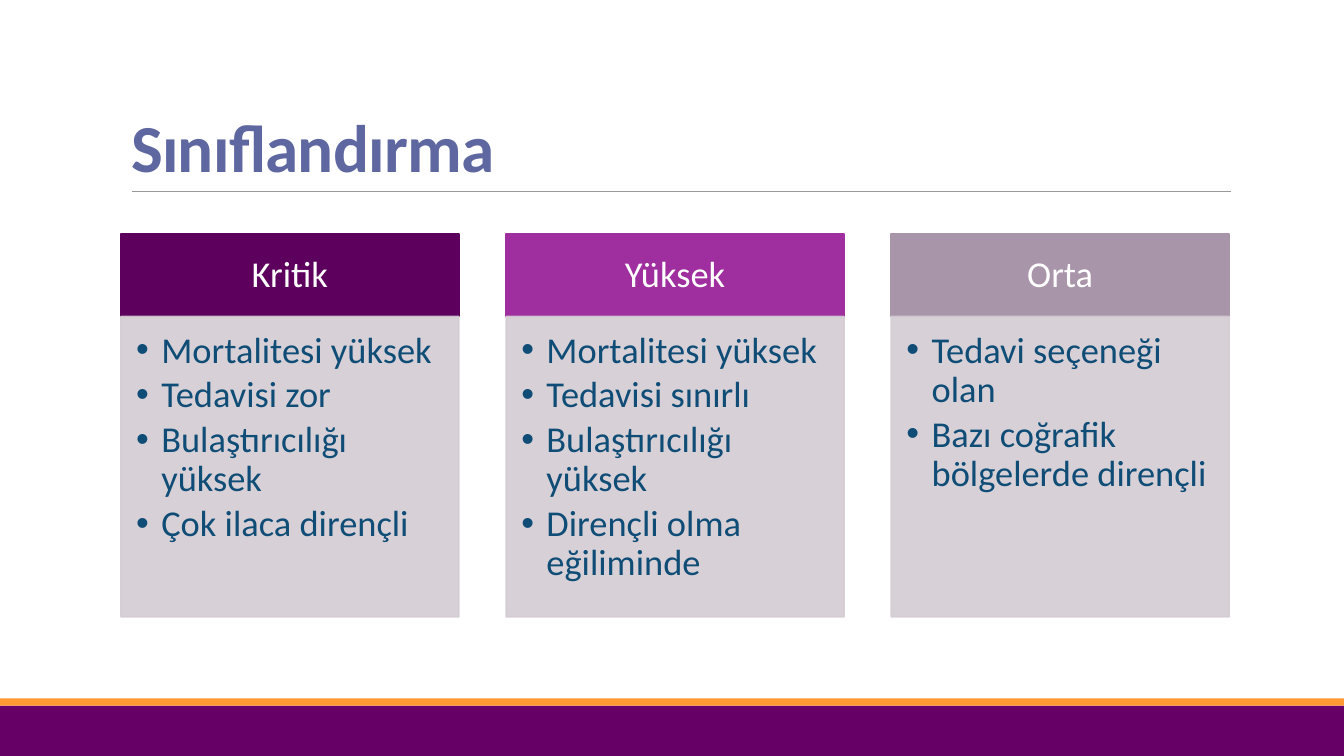
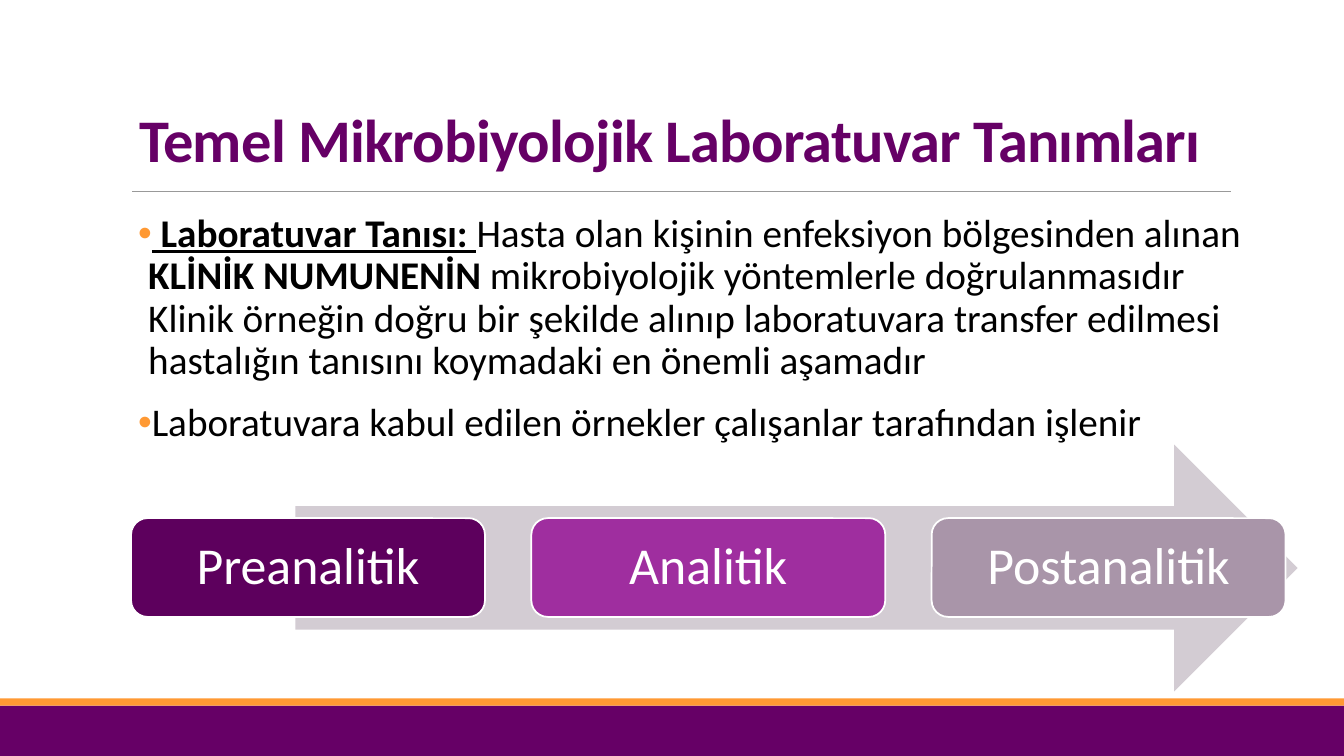
import pptx
import pptx.util
import pptx.dml.color
import pptx.enum.shapes
import pptx.enum.text
import pptx.oxml.ns
from lxml import etree

Inches = pptx.util.Inches
Pt = pptx.util.Pt
RGB = pptx.dml.color.RGBColor
SHAPE = pptx.enum.shapes.MSO_SHAPE
ALIGN = pptx.enum.text.PP_ALIGN
ANCHOR = pptx.enum.text.MSO_ANCHOR
qn = pptx.oxml.ns.qn

FONT = "Calibri"
PURPLE = RGB(0x66, 0x00, 0x66)
ORANGE = RGB(0xFF, 0x99, 0x33)
RULE_GRAY = RGB(0x99, 0x99, 0x99)
SLATE = RGB(0x5E, 0x67, 0xA0)
NAVY = RGB(0x0F, 0x4C, 0x76)
PALE = RGB(0xD3, 0xCC, 0xD3)
WHITE = RGB(0xFF, 0xFF, 0xFF)
BLACK = RGB(0x00, 0x00, 0x00)
ACCENTS = [RGB(0x5D, 0x00, 0x5D), RGB(0x9F, 0x2E, 0x9F), RGB(0xA9, 0x95, 0xA9)]

CLASSES = [
    ("Kritik", ["Mortalitesi yüksek", "Tedavisi zor",
                "Bulaştırıcılığı yüksek", "Çok ilaca dirençli"]),
    ("Yüksek", ["Mortalitesi yüksek", "Tedavisi sınırlı",
                "Bulaştırıcılığı yüksek", "Dirençli olma eğiliminde"]),
    ("Orta", ["Tedavi seçeneği olan", "Bazı coğrafik bölgelerde dirençli"]),
]
DEFINITIONS = [
    [(" Laboratuvar Tanısı: ", True, True),
     ("Hasta olan kişinin enfeksiyon bölgesinden alınan ", False, False),
     ("KLİNİK NUMUNENİN ", True, False),
     ("mikrobiyolojik yöntemlerle doğrulanmasıdır Klinik örneğin doğru bir "
      "şekilde alınıp laboratuvara transfer edilmesi hastalığın tanısını "
      "koymadaki en önemli aşamadır", False, False)],
    [("Laboratuvara kabul edilen örnekler çalışanlar tarafından işlenir", False, False)],
]
STAGES = ["Preanalitik", "Analitik", "Postanalitik"]


def place(shape, box):
    shape.left, shape.top, shape.width, shape.height = map(Inches, box)


def set_margins(frame, left, top, right, bottom):
    frame.margin_left, frame.margin_top = Inches(left), Inches(top)
    frame.margin_right, frame.margin_bottom = Inches(right), Inches(bottom)


def set_font(paragraph, size, color, bold=False):
    font = paragraph.font
    font.name, font.size, font.bold = FONT, Pt(size), bold
    font.color.rgb = color


def set_bullet(paragraph, indent, color):
    properties = paragraph._p.get_or_add_pPr()
    properties.set("marL", str(Inches(indent)))
    properties.set("indent", str(-Inches(indent)))
    bullet_color = etree.SubElement(properties, qn("a:buClr"))
    etree.SubElement(bullet_color, qn("a:srgbClr"), val=str(color))
    etree.SubElement(properties, qn("a:buFont"), typeface="Arial")
    etree.SubElement(properties, qn("a:buChar"), char="•")


def set_opacity(shape, percent):
    for color in shape.element.spPr.iter(qn("a:srgbClr")):
        etree.SubElement(color, qn("a:alpha"), val=str(percent * 1000))


def add_block(slide, kind, box, fill, line=None):
    block = slide.shapes.add_shape(kind, *map(Inches, box))
    block.shadow.inherit = False
    block.fill.solid()
    block.fill.fore_color.rgb = fill
    if line is None:
        block.line.fill.background()
    else:
        block.line.color.rgb = line
        block.line.width = Pt(1.25)
    return block


def write_label(block, text, size, margins):
    frame = block.text_frame
    frame.word_wrap = True
    frame.vertical_anchor = ANCHOR.MIDDLE
    set_margins(frame, *margins)
    label = frame.paragraphs[0]
    label.text = text
    label.alignment = ALIGN.CENTER
    label.line_spacing = 0.9
    set_font(label, size, WHITE)


def add_paragraphs(frame, count):
    return [frame.paragraphs[0]] + [frame.add_paragraph() for _ in range(count - 1)]


def write_title(slide, text, box, size, color):
    title = slide.shapes.title
    place(title, box)
    frame = title.text_frame
    frame.word_wrap = True
    frame.auto_size = pptx.enum.text.MSO_AUTO_SIZE.NONE
    frame.vertical_anchor = ANCHOR.BOTTOM
    heading = frame.paragraphs[0]
    heading.text = text
    heading.alignment = ALIGN.LEFT
    heading.line_spacing = 0.85
    set_font(heading, size, color, bold=True)
    heading._p.pPr.find(qn("a:defRPr")).set("spc", "-50")


def decorate_master(master, slide):
    footer = add_block(slide, SHAPE.RECTANGLE, (0, 7, 13.33, 0.5), PURPLE)
    stripe = add_block(slide, SHAPE.RECTANGLE, (0, 6.93, 13.33, 0.07), ORANGE)
    rule = slide.shapes.add_connector(
        pptx.enum.shapes.MSO_CONNECTOR.STRAIGHT,
        Inches(1.31), Inches(1.9), Inches(12.21), Inches(1.9))
    rule.line.color.rgb = RULE_GRAY
    rule.line.width = Pt(0.5)
    etree.SubElement(rule.element.spPr, qn("a:effectLst"))
    for part in (footer, stripe, rule):
        master.element.cSld.spTree.append(part.element)


def build_classification(slide):
    write_title(slide, "Sınıflandırma", (1.2, 0.31, 11, 1.59), 48, SLATE)
    left, pitch, width = 1.2, 3.82, 3.35
    for column, ((name, traits), accent) in enumerate(zip(CLASSES, ACCENTS)):
        x = left + column * pitch
        header = add_block(slide, SHAPE.RECTANGLE, (x, 2.32, width, 0.82), accent, accent)
        write_label(header, name, 26, (0.2, 0.12, 0.2, 0.12))
        card = add_block(slide, SHAPE.RECTANGLE, (x, 3.14, width, 2.98), PALE, PALE)
        set_opacity(card, 90)
        frame = card.text_frame
        frame.word_wrap = True
        frame.vertical_anchor = ANCHOR.TOP
        set_margins(frame, 0.15, 0.15, 0.2, 0.23)
        for paragraph, trait in zip(add_paragraphs(frame, len(traits)), traits):
            paragraph.text = trait
            paragraph.alignment = ALIGN.LEFT
            paragraph.line_spacing = 0.9
            paragraph.space_after = Pt(3.9)
            set_bullet(paragraph, 0.25, NAVY)
            set_font(paragraph, 26, NAVY)


def build_definitions(slide):
    write_title(slide, "Temel Mikrobiyolojik Laboratuvar Tanımları",
                (1.28, 1.01, 11.5, 0.78), 43.2, PURPLE)
    body = slide.placeholders[1]
    place(body, (1.37, 2.07, 11.04, 2.71))
    frame = body.text_frame
    frame.word_wrap = True
    frame.auto_size = pptx.enum.text.MSO_AUTO_SIZE.NONE
    set_margins(frame, 0, 0.05, 0, 0.05)
    paragraphs = add_paragraphs(frame, len(DEFINITIONS))
    for order, (paragraph, pieces) in enumerate(zip(paragraphs, DEFINITIONS)):
        paragraph.line_spacing = 0.9
        paragraph.space_before = Pt(12 if order else 0)
        paragraph.space_after = Pt(2)
        set_bullet(paragraph, 0.1, ORANGE)
        set_font(paragraph, 28, BLACK)
        for text, bold, underline in pieces:
            run = paragraph.add_run()
            run.text = text
            run.font.bold, run.font.underline = bold, underline

    add_block(slide, SHAPE.RIGHT_ARROW, (2.93, 4.41, 9.94, 2.45), PALE)
    left, pitch = 1.3, 3.97
    for step, (stage, accent) in enumerate(zip(STAGES, ACCENTS)):
        box = (left + step * pitch, 5.14, 3.51, 0.98)
        block = add_block(slide, SHAPE.ROUNDED_RECTANGLE, box, accent, WHITE)
        write_label(block, stage, 37, (0.15, 0.15, 0.15, 0.15))


def main():
    deck = pptx.Presentation()
    deck.slide_width, deck.slide_height = Inches(13.33), Inches(7.5)
    title_only, title_and_body = deck.slide_layouts[5], deck.slide_layouts[1]
    classification = deck.slides.add_slide(title_only)
    decorate_master(deck.slide_master, classification)
    build_classification(classification)
    build_definitions(deck.slides.add_slide(title_and_body))
    deck.save("out.pptx")


if __name__ == "__main__":
    main()
